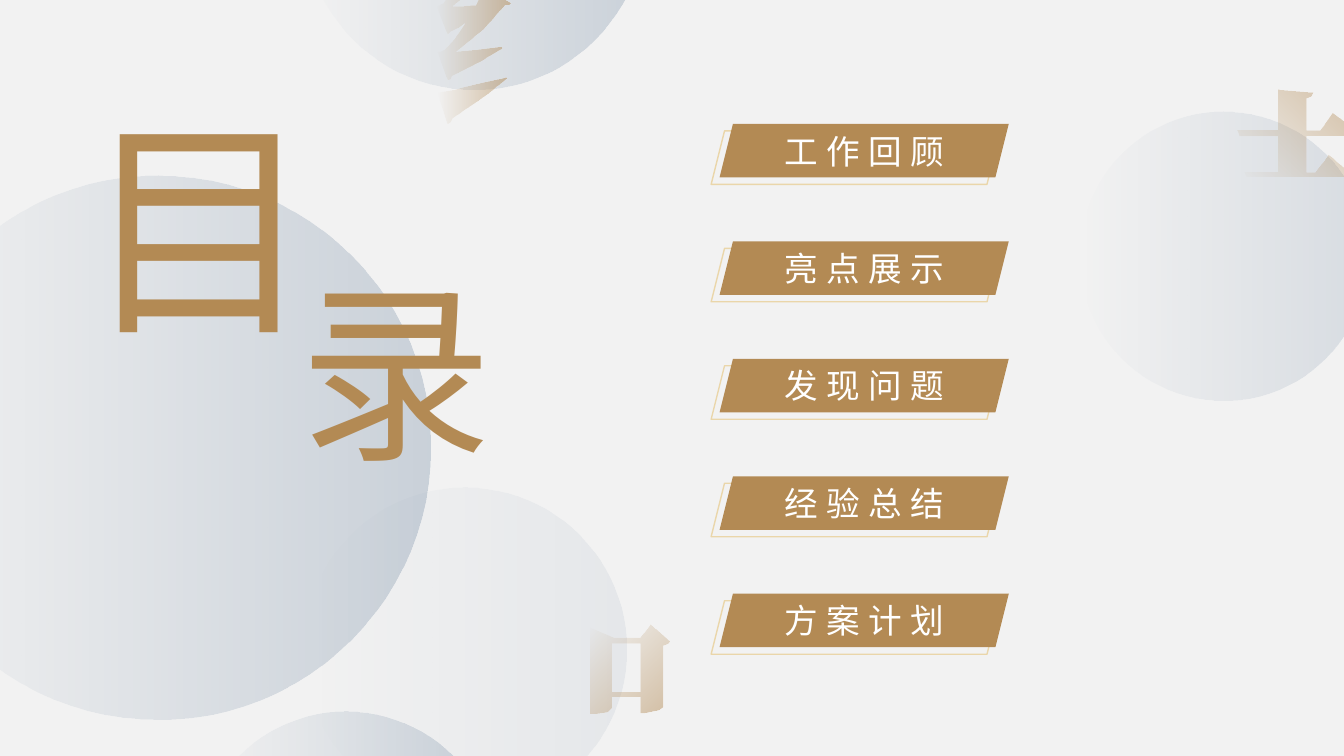
from lxml import etree
from pptx import Presentation
from pptx.dml.color import RGBColor
from pptx.enum.shapes import MSO_SHAPE
from pptx.enum.text import MSO_ANCHOR, MSO_AUTO_SIZE, PP_ALIGN
from pptx.oxml.ns import qn
from pptx.util import Pt

OVAL, SLANT = MSO_SHAPE.OVAL, MSO_SHAPE.PARALLELOGRAM
MIDDLE, CENTER, FIXED = MSO_ANCHOR.MIDDLE, PP_ALIGN.CENTER, MSO_AUTO_SIZE.NONE

TOPICS = ["工作回顾", "亮点展示", "发现问题", "经验总结", "方案计划"]
HEADS = [  # text, size name, left, top, width, height
    ("目", "title", 52.6, 55.4, 172.8, 206.6),
    ("录", "second", 196.6, 176.4, 172.8, 172.8),
]

# left, top, diameter, opacity in percent
BALLS = [
    (-81.4, 125.3, 388.8, 30),
    (216.7, 348.5, 231.1, 10),
    (139.7, 508.3, 214.6, 30),
    (771.1, 79.9, 205.9, 20),
    (216.7, -179.3, 243.4, 30),
]

# gradient angle, then strokes; each stroke is a list of closed outlines
# whose points count in units of GRID
GLYPHS = [
    (225, [[[
        (1268, 89), (1303, 92), (1301, 96), (1296, 98), (1296, 129),
        (1310, 129), (1322, 112), (1326, 115), (1336, 123), (1346, 131),
        (1344, 134), (1340, 135), (1296, 135), (1296, 170), (1305, 170),
        (1318, 153), (1322, 156), (1331, 164), (1341, 172), (1339, 174),
        (1335, 175), (1237, 175), (1235, 170), (1268, 170), (1268, 135),
        (1230, 135), (1228, 129), (1268, 129)]]]),
    (135, [[
        [(645, 620), (664, 637), (662, 639), (657, 641), (657, 701),
         (653, 704), (639, 707), (635, 707), (635, 691), (607, 691),
         (607, 702), (603, 706), (590, 708), (586, 708), (586, 623),
         (609, 633), (635, 633)],
        [(607, 639), (607, 686), (635, 686), (635, 639)]]]),
    (180, [
        [[(463, -46), (492, -33), (490, -30), (486, -30), (469, -11),
          (449, 6), (460, 6), (472, 5), (476, -4), (479, -13),
          (506, 3), (504, 5), (500, 5), (479, 29), (452, 51),
          (473, 49), (497, 46), (497, 48), (477, 60), (448, 75),
          (447, 78), (444, 79), (434, 51), (437, 51), (441, 49),
          (451, 38), (462, 22), (455, 27), (447, 31), (446, 32),
          (444, 34), (433, 6), (436, 5), (440, 3), (449, -10),
          (457, -28)]],
        [[(502, 77), (502, 78), (481, 95), (449, 117), (447, 121),
          (444, 123), (434, 92), (451, 89), (475, 83)]]]),
]

THEME = {
    "back": "F2F2F2", "gold": "B38A54", "edge": "EAD6AA",
    "blue": "6A839F", "white": "FFFFFF", "font": "Noto Sans CJK SC",
    "title": 166, "second": 138, "topic": 24,
}
GRID = Pt(0.72)
TAB = {"left": 514, "top": 88.5, "width": 206.6, "height": 38.2, "step": 83.9}
EDGE_X, EDGE_Y = -6, 5


def color(name):
    return RGBColor.from_string(THEME[name])


def fade(shape, tint, alpha, angle):
    """Fill with one tint that fades from alpha percent to clear."""
    fill = shape.fill
    fill.gradient()
    fill.gradient_angle = angle
    for stop, part in zip(fill.gradient_stops, (alpha, 0)):
        stop.color.rgb = color(tint)
    for node, part in zip(shape.element.spPr.iter(qn("a:srgbClr")), (alpha, 0)):
        etree.SubElement(node, qn("a:alpha"), val=str(part * 1000))
    shape.line.fill.background()
    shape.shadow.inherit = False


def add_form(host, kind, *box):
    shape = host.add_shape(kind, *map(Pt, box))
    shape.shadow.inherit = False
    return shape


def write(shape, text, size, tint, gap, pad):
    frame = shape.text_frame
    side, edge = pad
    values = {
        "word_wrap": True, "auto_size": FIXED, "vertical_anchor": MIDDLE,
        "margin_left": Pt(side), "margin_right": Pt(side),
        "margin_top": Pt(edge), "margin_bottom": Pt(edge),
    }
    for key, value in values.items():
        setattr(frame, key, value)
    para = frame.paragraphs[0]
    para.alignment = CENTER
    run = para.add_run()
    run.text = text
    run.font.size = Pt(THEME[size])
    run.font.color.rgb = color(tint)
    run.font.name = THEME["font"]
    props = run.font._element
    props.set("spc", str(gap * 100))
    etree.SubElement(props, qn("a:ea"), typeface=THEME["font"])


def add_stroke(host, loops, angle):
    pen = host.build_freeform(*loops[0][0], scale=GRID)
    pen.add_line_segments(loops[0][1:], close=True)
    for loop in loops[1:]:
        pen.move_to(*loop[0])
        pen.add_line_segments(loop[1:], close=True)
    fade(pen.convert_to_shape(), "gold", 50, angle)


def add_tab(host, text, row):
    left, top = TAB["left"], TAB["top"] + row * TAB["step"]
    size = TAB["width"], TAB["height"]
    edge = add_form(host, SLANT, left + EDGE_X, top + EDGE_Y, *size)
    edge.fill.background()
    edge.line.color.rgb = color("edge")
    edge.line.width = Pt(1)
    face = add_form(host, SLANT, left, top, *size)
    face.fill.solid()
    face.fill.fore_color.rgb = color("gold")
    face.line.fill.background()
    write(face, text, "topic", "white", 6, (2.9, 3.6))


def add_heads(slide):
    title = slide.shapes.title
    title.element.getparent().append(title.element)
    for row, (text, size, *box) in enumerate(HEADS):
        spot = [Pt(v) for v in box]
        head = slide.shapes.add_textbox(*spot) if row else title
        for key, value in zip(("left", "top", "width", "height"), spot):
            setattr(head, key, value)
        write(head, text, size, "gold", 12, (7.2, 3.6))


def main():
    deck = Presentation()
    deck.slide_width, deck.slide_height = Pt(960), Pt(540)
    slide = deck.slides.add_slide(deck.slide_layouts[5])
    back = slide.background.fill
    back.solid()
    back.fore_color.rgb = color("back")
    shapes = slide.shapes
    for left, top, size, alpha in BALLS:
        fade(add_form(shapes, OVAL, left, top, size, size), "blue", alpha, 180)
    for angle, strokes in GLYPHS:
        host = shapes.add_group_shape().shapes if len(strokes) > 1 else shapes
        for loops in strokes:
            add_stroke(host, loops, angle)
    add_heads(slide)
    for row, text in enumerate(TOPICS):
        add_tab(shapes.add_group_shape().shapes, text, row)
    deck.save("out.pptx")


if __name__ == "__main__":
    main()
